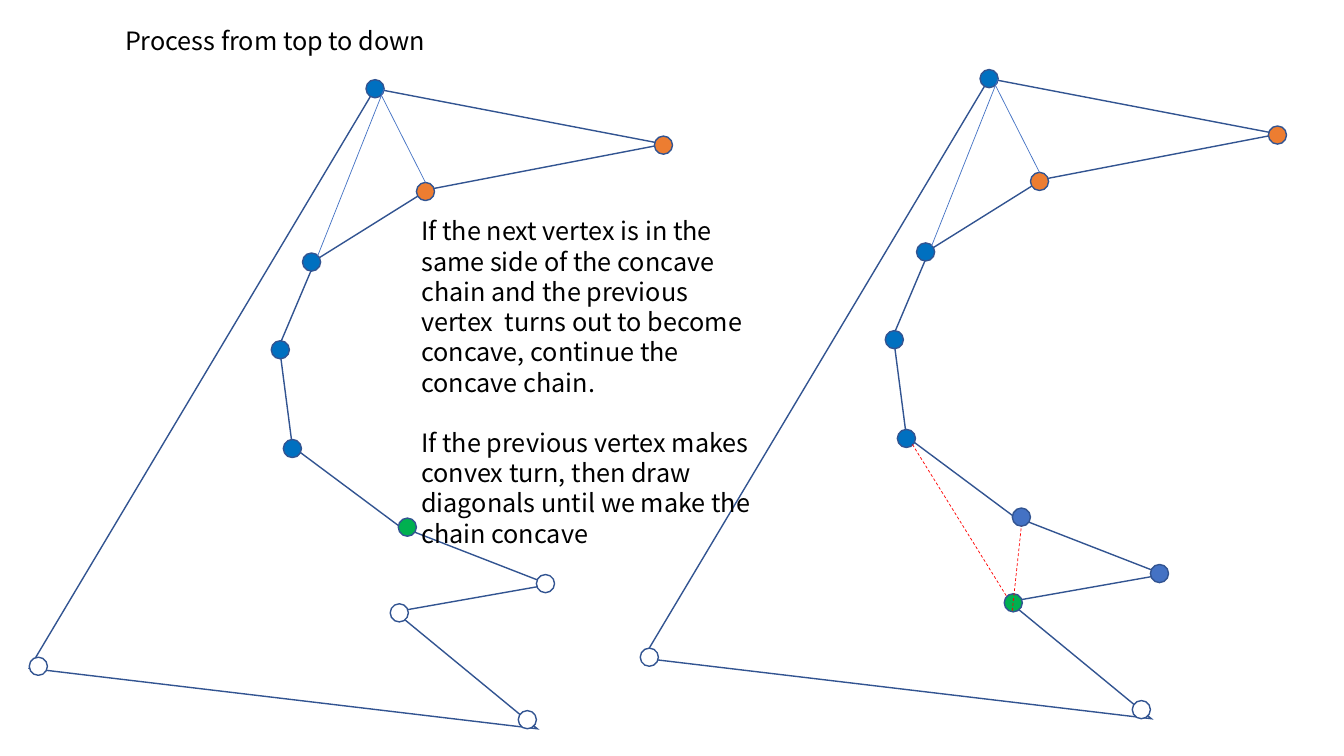
from lxml.etree import SubElement
from pptx import Presentation
from pptx.dml.color import RGBColor as RGB
from pptx.enum.dml import MSO_LINE as DASH
from pptx.enum.shapes import MSO_CONNECTOR as CONN, MSO_SHAPE as SHAPE
from pptx.enum.text import MSO_ANCHOR as ANCHOR, PP_ALIGN as ALIGN
from pptx.oxml.ns import qn
from pptx.util import Pt

PX = 9144
DOT = 18
FONT = "Noto Sans CJK JP"
COLORS = {
    "edge": "325491",
    "diagonal": "4472C4",
    "new": "FF0000",
    "left": "0070C0",
    "right": "ED7D31",
    "current": "00B050",
    "chain": "4472C4",
    "open": "FFFFFF",
    "text": "000000",
}
OUTLINE = [
    (372, 88), (29, 663), (533, 723), (392, 607), (545, 580), (396, 522),
    (290, 443), (277, 343), (313, 258), (425, 188), (659, 143),
]
VERTICES = [
    (363, 79, "left"), (649, 135, "right"), (413, 181, "right"),
    (300, 251, "left"), (269, 338, "left"), (281, 436, "left"),
    (514, 705, "open"),
]
DIAGONALS = [(378, 94, 422, 181), (381, 88, 315, 254)]
NEW_DIAGONALS = [(1004, 606, 1013, 522), (905, 441, 998, 591)]
PANELS = [
    {"shift": (0, 0), "corner": (29, 652),
     "pending": [(387, 599, "open"), (532, 570, "open"), (395, 514, "current")]},
    {"shift": (609, -10), "corner": (635, 643),
     "pending": [(387, 599, "current"), (532, 570, "chain"), (395, 514, "chain")]},
]
RULES = [
    "If the next vertex is in the same side of the concave chain and the "
    "previous vertex  turns out to become concave, continue the concave chain.",
    "If the previous vertex makes convex turn, then draw diagonals until we "
    "make the chain concave",
]


def color(name):
    return RGB.from_string(COLORS[name])


def assign(obj, values):
    for name, value in values.items():
        setattr(obj, name, value)


class Canvas:
    font = {"name": FONT, "size": Pt(18), "bold": False}
    paragraph = {"alignment": ALIGN.LEFT, "line_spacing": Pt(21.6)}
    frame = {"word_wrap": True}

    def __init__(self, slide):
        self.slide = slide
        self.shapes = slide.shapes

    def fill_text(self, sp, texts, gap=0, **frame):
        tf = sp.text_frame
        assign(tf, {**self.frame, **frame})
        for i, text in enumerate(texts):
            p = tf.add_paragraph() if i else tf.paragraphs[0]
            assign(p, {**self.paragraph, "space_before": Pt(gap if i else 0)})
            r = p.add_run()
            r.text = text
            assign(r.font, self.font)
            r.font.color.rgb = color("text")

    def title(self, box, text):
        sp = self.shapes.title
        assign(sp, dict(zip(("left", "top", "width", "height"), (v * PX for v in box))))
        self.fill_text(sp, [text], vertical_anchor=ANCHOR.MIDDLE)

    def text(self, box, texts, gap):
        sp = self.shapes.add_textbox(*(v * PX for v in box))
        self.fill_text(sp, texts, gap)

    def stroke(self, line, name, width):
        line.color.rgb = color(name)
        line.width = Pt(width)

    def polygon(self, points):
        fb = self.shapes.build_freeform(*points[0], scale=PX)
        fb.add_line_segments(points[1:], close=True)
        sp = fb.convert_to_shape()
        sp.shadow.inherit = False
        sp.fill.background()
        self.stroke(sp.line, "edge", 1)
        ln = sp._element.spPr.find(qn("a:ln"))
        SubElement(ln, qn("a:miter"), lim="800000")

    def dot(self, x, y, fill):
        sp = self.shapes.add_shape(SHAPE.OVAL, x * PX, y * PX, DOT * PX, DOT * PX)
        sp.shadow.inherit = False
        sp.fill.solid()
        sp.fill.fore_color.rgb = color(fill)
        self.stroke(sp.line, "edge", 1)

    def line(self, ends, name, dash=None):
        cn = self.shapes.add_connector(CONN.STRAIGHT, *(v * PX for v in ends))
        self.stroke(cn.line, name, 0.5)
        if dash:
            cn.line.dash_style = dash
        SubElement(cn._element.spPr, qn("a:effectLst"))


def draw_panel(canvas, shift, corner, pending):
    dx, dy = shift
    canvas.polygon([(x + dx, y + dy) for x, y in OUTLINE])
    for x, y, fill in VERTICES + pending:
        canvas.dot(x + dx, y + dy, fill)
    canvas.dot(*corner, "open")
    for x1, y1, x2, y2 in DIAGONALS:
        canvas.line((x1 + dx, y1 + dy, x2 + dx, y2 + dy), "diagonal")


def main():
    prs = Presentation()
    assign(prs, {"slide_width": 1333 * PX, "slide_height": 750 * PX})
    canvas = Canvas(prs.slides.add_slide(prs.slide_layouts[5]))
    canvas.title((114, 20, 591, 41), "Process from top to down")
    for panel in PANELS:
        draw_panel(canvas, **panel)
    for ends in NEW_DIAGONALS:
        canvas.line(ends, "new", DASH.DASH)
    canvas.text((408, 209, 360, 313), RULES, gap=21.6)
    prs.save("out.pptx")


if __name__ == "__main__":
    main()
